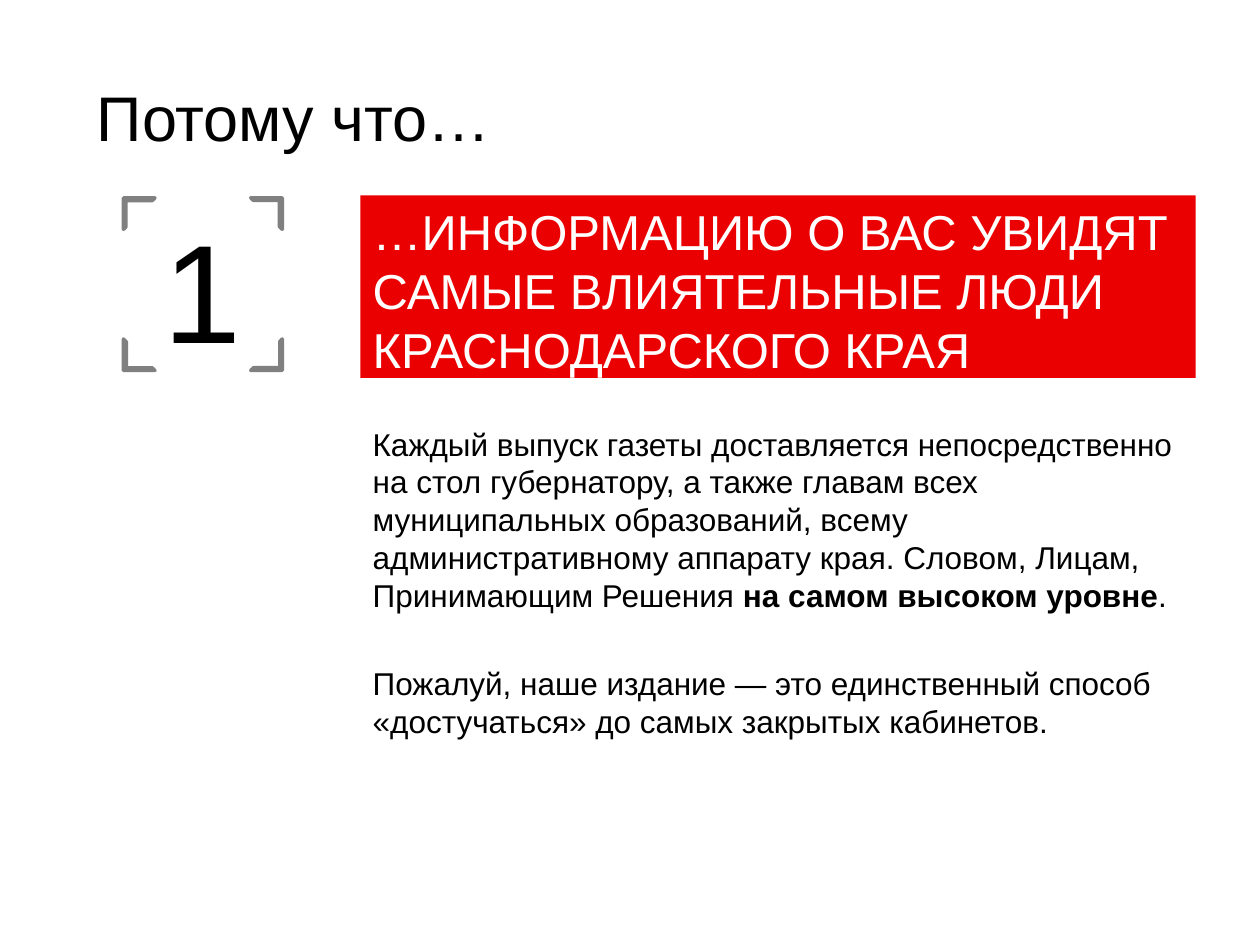
from pptx import Presentation
from pptx.dml.color import RGBColor
from pptx.enum.shapes import MSO_SHAPE as Shape
from pptx.enum.text import MSO_ANCHOR as Anchor, PP_ALIGN as Align
from pptx.util import Inches, Pt

FONT = "Arial"
BLACK, WHITE, RED, GRAY = "000000", "FFFFFF", "EA0000", "808080"
WIDTH, HEIGHT = 10, 7.5
NUMBER_LEFT, NUMBER_WIDTH = 0.98, 1.26
MAIN_LEFT, MAIN_WIDTH = 2.86, 6.63
ROW_TOP, ROW_HEIGHT = 1.55, 1.45
CORNER = 0.25

TITLE = "Потому что…"
HEADLINE = "…ИНФОРМАЦИЮ О ВАС УВИДЯТ САМЫЕ ВЛИЯТЕЛЬНЫЕ ЛЮДИ КРАСНОДАРСКОГО КРАЯ"
# Each paragraph is a list of (text, bold) runs.
BODY = [
    [("Каждый выпуск газеты доставляется непосредственно на стол губернатору, "
      "а также главам всех муниципальных образований, всему административному "
      "аппарату края. Словом, Лицам, Принимающим Решения ", False),
     ("на самом высоком уровне", True), (".", False)],
    [("Пожалуй, наше издание ― это единственный способ «достучаться» "
      "до самых закрытых кабинетов.", False)],
]


def color(hex_string):
    return RGBColor.from_string(hex_string)


def add_text(slide, box, paragraphs, size, ink=BLACK, fill=None,
             anchor=Anchor.TOP, align=Align.LEFT, gap=0):
    """Add a text box of run lists, with gap points between paragraphs."""
    shape = slide.shapes.add_textbox(*map(Inches, box))
    if fill:
        shape.fill.solid()
        shape.fill.fore_color.rgb = color(fill)
    frame = shape.text_frame
    frame.word_wrap = True
    frame.vertical_anchor = anchor
    for index, runs in enumerate(paragraphs):
        paragraph = frame.add_paragraph() if index else frame.paragraphs[0]
        paragraph.alignment = align
        if index:
            paragraph.space_before = Pt(gap)
        paragraph.font.name = FONT
        paragraph.font.size = Pt(size)
        paragraph.font.color.rgb = color(ink)
        for text, bold in runs:
            run = paragraph.add_run()
            run.text = text
            if bold:
                run.font.bold = True


def add_corner(slide, left, top, rotation):
    shape = slide.shapes.add_shape(
        Shape.HALF_FRAME, *map(Inches, (left, top, CORNER, CORNER)))
    shape.adjustments[0], shape.adjustments[1] = 0.09, 0.08
    shape.rotation = rotation
    shape.shadow.inherit = False
    shape.fill.solid()
    shape.fill.fore_color.rgb = color(GRAY)
    shape.line.color.rgb = color(GRAY)
    shape.line.width = Pt(2)


def add_number(slide, number):
    """Add a large number framed by four corner brackets."""
    add_text(slide, (NUMBER_LEFT, ROW_TOP, NUMBER_WIDTH, ROW_HEIGHT),
             [[(number, False)]], 80, anchor=Anchor.BOTTOM, align=Align.CENTER)
    right = NUMBER_LEFT + NUMBER_WIDTH - CORNER
    top, bottom = ROW_TOP + 0.02, ROW_TOP + ROW_HEIGHT - 0.06 - CORNER
    corners = [(NUMBER_LEFT, top), (right, top), (right, bottom), (NUMBER_LEFT, bottom)]
    for turn, (left, corner_top) in enumerate(corners):
        add_corner(slide, left, corner_top, 90 * turn)


def main():
    presentation = Presentation()
    presentation.slide_width, presentation.slide_height = Inches(WIDTH), Inches(HEIGHT)
    slide = presentation.slides.add_slide(presentation.slide_layouts[6])
    add_text(slide, (0.67, 0.3, 8.83, 1.25), [[(TITLE, False)]], 36,
             anchor=Anchor.MIDDLE)
    add_text(slide, (MAIN_LEFT, ROW_TOP, MAIN_WIDTH, ROW_HEIGHT),
             [[(HEADLINE, False)]], 28, ink=WHITE, fill=RED)
    add_text(slide, (MAIN_LEFT, 3.32, MAIN_WIDTH, 3.15), BODY, 18, gap=29)
    add_number(slide, "1")
    presentation.save("out.pptx")


if __name__ == "__main__":
    main()
